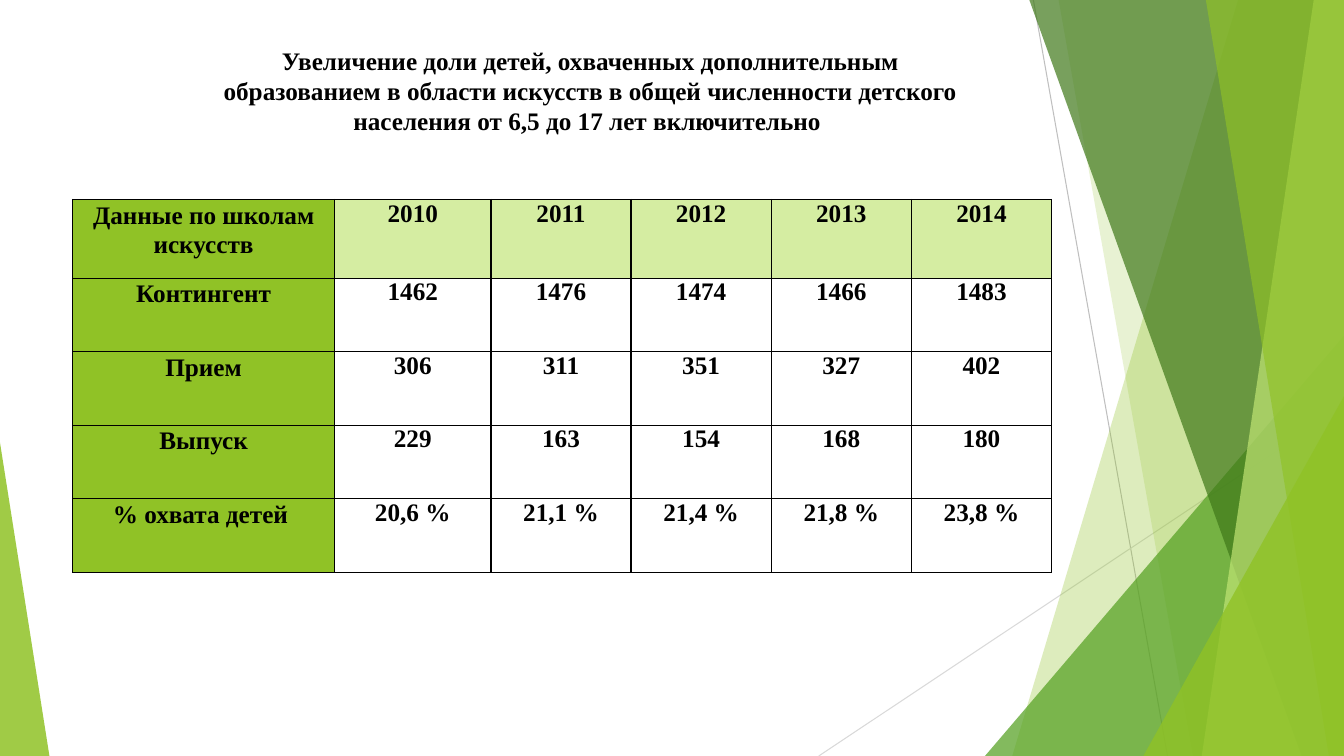
import pptx
import pptx.util
import pptx.dml.color
import pptx.enum.shapes
import pptx.enum.text
import pptx.oxml
import pptx.oxml.ns
import lxml.etree

COLORS = {
    "black": "000000",
    "lime": "90C226",
    "green": "54A021",
    "forest": "3F7819",
    "pale": "C0E474",
    "header": "D5EDA2",
    "grey": "BFBFBF",
    "silver": "D9D9D9",
}
FONT = "Times New Roman"

presentation = pptx.Presentation()
presentation.slide_width = pptx.util.Inches(13.33)
presentation.slide_height = pptx.util.Inches(7.5)
slide = presentation.slides.add_slide(presentation.slide_layouts[6])
shapes = slide.shapes


def position(x, y):
    return (round(presentation.slide_width * x / 100),
            round(presentation.slide_height * y / 100))


def set_font(paragraph):
    paragraph.alignment = pptx.enum.text.PP_ALIGN.CENTER
    paragraph.font.name = FONT
    paragraph.font.size = pptx.util.Pt(18)
    paragraph.font.bold = True
    paragraph.font.color.rgb = pptx.dml.color.RGBColor.from_string(COLORS["black"])


rays = [
    ("grey", (76.89, 0), (86.87, 100)),
    ("silver", (100, 53.73), (60.92, 100)),
]
for color, start, end in rays:
    ray = shapes.add_connector(pptx.enum.shapes.MSO_CONNECTOR.STRAIGHT,
                               *position(*start), *position(*end))
    ray.line.color.rgb = pptx.dml.color.RGBColor.from_string(COLORS[color])
    ray.line.width = pptx.util.Pt(0.75)
    lxml.etree.SubElement(ray._element.spPr, pptx.oxml.ns.qn("a:effectLst"))

facets = [
    ("band", "lime", 30, 92.12, 75.32),
    ("band", "lime", 20, 78.77, 88.75),
    ("right corner", "green", 72, 73.29, 44.4),
    ("band", "forest", 70, 76.59, 96.85),
    ("band", "pale", 70, 97.75, 89.42),
    ("band", "lime", 65, 89.72, 98.87),
    ("right corner", "lime", 80, 85.07, 52.4),
    ("left corner", "lime", 85, 3.68, 58.53),
]
for kind, color, opacity, first, second in facets:
    if kind == "band":
        builder = shapes.build_freeform(*position(first, 0))
        builder.add_line_segments(
            [position(100, 0), position(100, 100), position(second, 100)])
        facet = builder.convert_to_shape()
    else:
        left, right, apex = (first, 100, 1) if kind == "right corner" else (0, first, 0)
        facet = shapes.add_shape(
            pptx.enum.shapes.MSO_SHAPE.ISOSCELES_TRIANGLE,
            *position(left, second), *position(right - left, 100 - second))
        facet.adjustments[0] = apex
    facet.shadow.inherit = False
    facet.line.fill.background()
    facet.fill.solid()
    facet.fill.fore_color.rgb = pptx.dml.color.RGBColor.from_string(COLORS[color])
    color_element = facet._element.spPr.find(".//" + pptx.oxml.ns.qn("a:srgbClr"))
    alpha = lxml.etree.SubElement(color_element, pptx.oxml.ns.qn("a:alpha"))
    alpha.set("val", str(opacity * 1000))

records = [
    ["Данные по школам искусств", "2010", "2011", "2012", "2013", "2014"],
    ["Контингент", "1462", "1476", "1474", "1466", "1483"],
    ["Прием", "306", "311", "351", "327", "402"],
    ["Выпуск", "229", "163", "154", "168", "180"],
    ["% охвата детей ", "20,6 %", "21,1 %", "21,4 %", "21,8 %", "23,8 %"],
]
column_shares = [19.5, 11.63] + [10.43] * 4
row_shares = [10.4] + [9.73] * 4
table = shapes.add_table(
    len(row_shares), len(column_shares), *position(5.4, 26.4),
    *position(sum(column_shares), sum(row_shares))).table
table.first_row = False
table.horz_banding = False
for column, share in zip(table.columns, column_shares):
    column.width = position(share, 0)[0]
for row, share in zip(table.rows, row_shares):
    row.height = position(0, share)[1]

for row_index, record in enumerate(records):
    for column_index, text in enumerate(record):
        cell = table.cell(row_index, column_index)
        cell.margin_left = cell.margin_right = pptx.util.Inches(0.07)
        cell.margin_top = cell.margin_bottom = 0
        cell.text = text
        paragraph = cell.text_frame.paragraphs[0]
        set_font(paragraph)
        if column_index == 0:
            paragraph.line_spacing = 1.07
        cell_properties = cell._tc.get_or_add_tcPr()
        for side in ("lnL", "lnR", "lnT", "lnB"):
            cell_properties.append(pptx.oxml.parse_xml(
                f'<a:{side} {pptx.oxml.ns.nsdecls("a")} w="12700"><a:solidFill>'
                f'<a:srgbClr val="{COLORS["black"]}"/></a:solidFill></a:{side}>'))
        if column_index == 0 or row_index == 0:
            cell.fill.solid()
            cell.fill.fore_color.rgb = pptx.dml.color.RGBColor.from_string(
                COLORS["lime" if column_index == 0 else "header"])
        else:
            cell.fill.background()

title = shapes.add_textbox(*position(14.85, 5.33), *position(58.14, 13.47))
title.text_frame.word_wrap = True
title.text_frame.auto_size = pptx.enum.text.MSO_AUTO_SIZE.SHAPE_TO_FIT_TEXT
title.text_frame.text = (
    "Увеличение доли детей, охваченных дополнительным образованием "
    "в области искусств в общей численности детского населения "
    "от 6,5 до 17 лет включительно ")
set_font(title.text_frame.paragraphs[0])

presentation.save("out.pptx")
